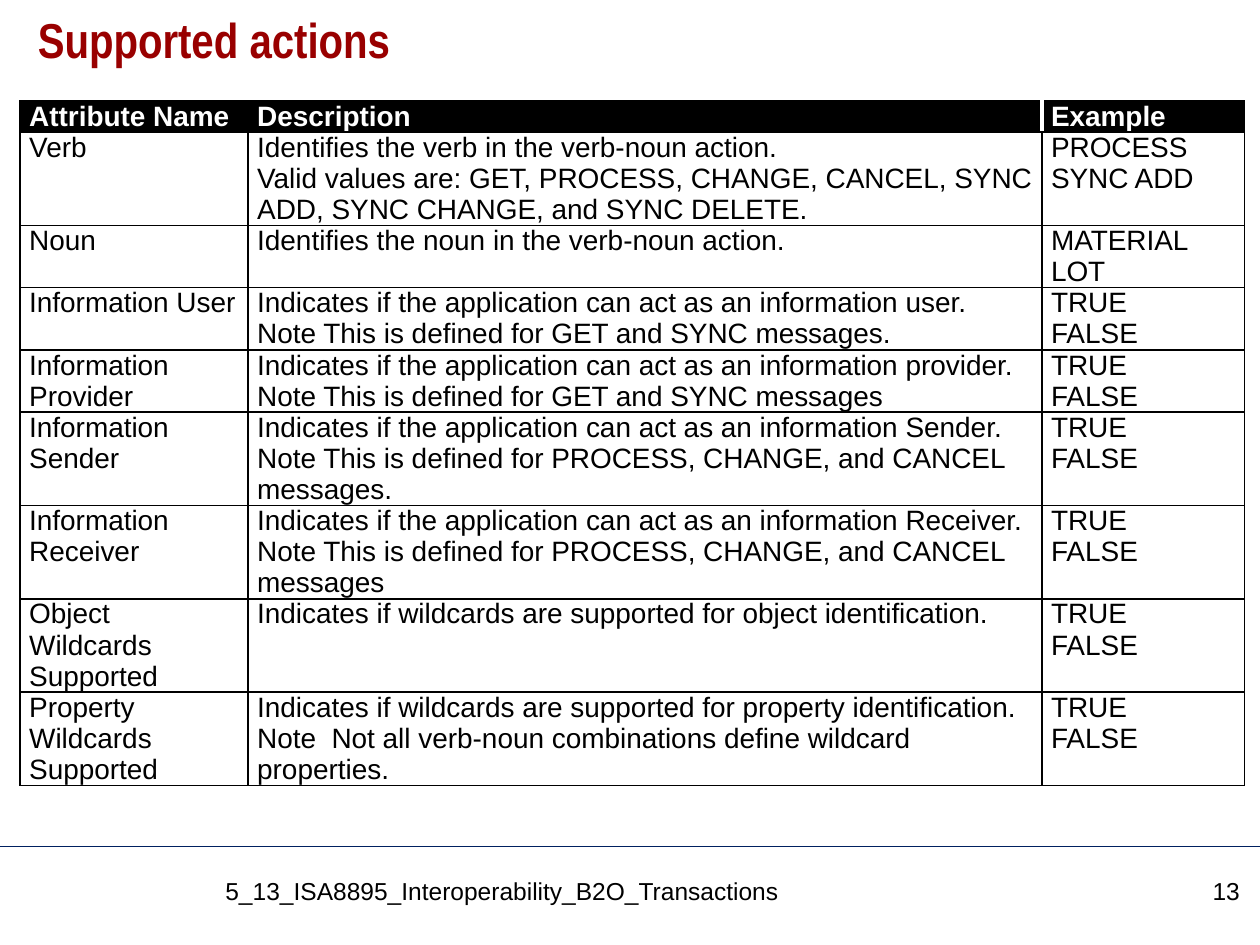
from lxml import etree
from pptx import Presentation
from pptx.dml.color import RGBColor
from pptx.enum.shapes import MSO_CONNECTOR
from pptx.enum.text import MSO_ANCHOR, PP_ALIGN
from pptx.oxml.ns import qn
from pptx.util import Pt

LINE = MSO_CONNECTOR.STRAIGHT
TOP = MSO_ANCHOR.TOP
LEFT, RIGHT = PP_ALIGN.LEFT, PP_ALIGN.RIGHT
BLACK = RGBColor(0, 0, 0)
WHITE = RGBColor(255, 255, 255)
RED = RGBColor(0x99, 0, 0)
NAVY = RGBColor(0, 0x20, 0x60)

TITLE = "Supported actions"
FOOTERS = [
    ("5_13_ISA8895_Interoperability_B2O_Transactions", 121.7, 519, LEFT),
    ("13", 649.4, 66.2, RIGHT),
]
BOOLEAN = "TRUE\nFALSE"
ROWS = [
    ("Attribute Name", "Description", "Example"),
    ("Verb",
     "Identifies the verb in the verb-noun action.\n"
     "Valid values are: GET, PROCESS, CHANGE, CANCEL, SYNC ADD, SYNC CHANGE, and SYNC DELETE.",
     "PROCESS\nSYNC ADD"),
    ("Noun", "Identifies the noun in the verb-noun action.", "MATERIAL LOT"),
    ("Information User",
     "Indicates if the application can act as an information user.\n"
     "Note This is defined for GET and SYNC messages.", BOOLEAN),
    ("Information Provider",
     "Indicates if the application can act as an information provider.\n"
     "Note This is defined for GET and SYNC messages", BOOLEAN),
    ("Information Sender",
     "Indicates if the application can act as an information Sender.\n"
     "Note This is defined for PROCESS, CHANGE, and CANCEL messages.", BOOLEAN),
    ("Information Receiver",
     "Indicates if the application can act as an information Receiver.\n"
     "Note This is defined for PROCESS, CHANGE, and CANCEL messages", BOOLEAN),
    ("Object Wildcards Supported",
     "Indicates if wildcards are supported for object identification.", BOOLEAN),
    ("Property Wildcards Supported",
     "Indicates if wildcards are supported for property identification.\n"
     "Note  Not all verb-noun combinations define wildcard properties.", BOOLEAN),
]
COL_WIDTHS = [130.3, 453.6, 115.9]
ROW_HEIGHTS = [13.7, 31, 18, 24.5, 24.5, 31, 31, 20.2, 31]


def set_font(p, size, color, name="Arial", bold=False):
    f = p.font
    f.name, f.size, f.bold = name, Pt(size), bold
    f.color.rgb = color


def set_borders(cell, borders):
    tcPr = cell._tc.get_or_add_tcPr()
    for i, (side, (color, width)) in enumerate(borders.items()):
        ln = etree.Element(qn("a:ln" + side), w=str(Pt(width)))
        fill = etree.SubElement(ln, qn("a:solidFill"))
        etree.SubElement(fill, qn("a:srgbClr"), val=str(color))
        tcPr.insert(i, ln)


def add_actions_table(s):
    frame = s.shapes.add_table(len(ROWS), len(COL_WIDTHS), Pt(11.5), Pt(57.6),
                               Pt(sum(COL_WIDTHS)), Pt(sum(ROW_HEIGHTS)))
    table = frame.table
    for col, width in zip(table.columns, COL_WIDTHS):
        col.width = Pt(width)
    for row, height in zip(table.rows, ROW_HEIGHTS):
        row.height = Pt(height)
    for r, texts in enumerate(ROWS):
        header = r == 0
        for c, text in enumerate(texts):
            cell = table.cell(r, c)
            cell.margin_left = cell.margin_right = Pt(5.2)
            cell.margin_top = cell.margin_bottom = 0
            cell.text = text
            for p in cell.text_frame.paragraphs:
                set_font(p, 16, WHITE if header else BLACK, bold=header)
            if header:
                cell.fill.solid()
                cell.fill.fore_color.rgb = BLACK
            else:
                cell.fill.background()
            borders = dict.fromkeys("LRTB", (BLACK, 1))
            if header and c > 0:
                borders["R" if c == 1 else "L"] = (WHITE, 2.25)
            set_borders(cell, borders)


def main():
    """Build the supported actions slide."""
    prs = Presentation()
    prs.slide_width, prs.slide_height = Pt(720), Pt(540)
    s = prs.slides.add_slide(prs.slide_layouts[5])

    rule = s.shapes.add_connector(LINE, 0, Pt(483.8), Pt(720), Pt(483.8))
    rule.line.color.rgb = NAVY
    rule.line.width = Pt(0.75)
    etree.SubElement(rule._element.spPr, qn("a:effectLst"))

    title = s.shapes.title
    title.left, title.top, title.width, title.height = Pt(14.4), Pt(5.8), Pt(692), Pt(59.8)
    tf = title.text_frame
    tf.text = TITLE
    tf.vertical_anchor = TOP
    p = tf.paragraphs[0]
    p.alignment, p.line_spacing = LEFT, 0.9
    set_font(p, 28, RED, "Arial Narrow", True)

    add_actions_table(s)

    for text, left, width, align in FOOTERS:
        tf = s.shapes.add_textbox(Pt(left), Pt(496.8), Pt(width), Pt(32.4)).text_frame
        tf.word_wrap = True
        tf.text = text
        p = tf.paragraphs[0]
        p.alignment = align
        set_font(p, 14, BLACK)

    prs.save("out.pptx")


if __name__ == "__main__":
    main()
